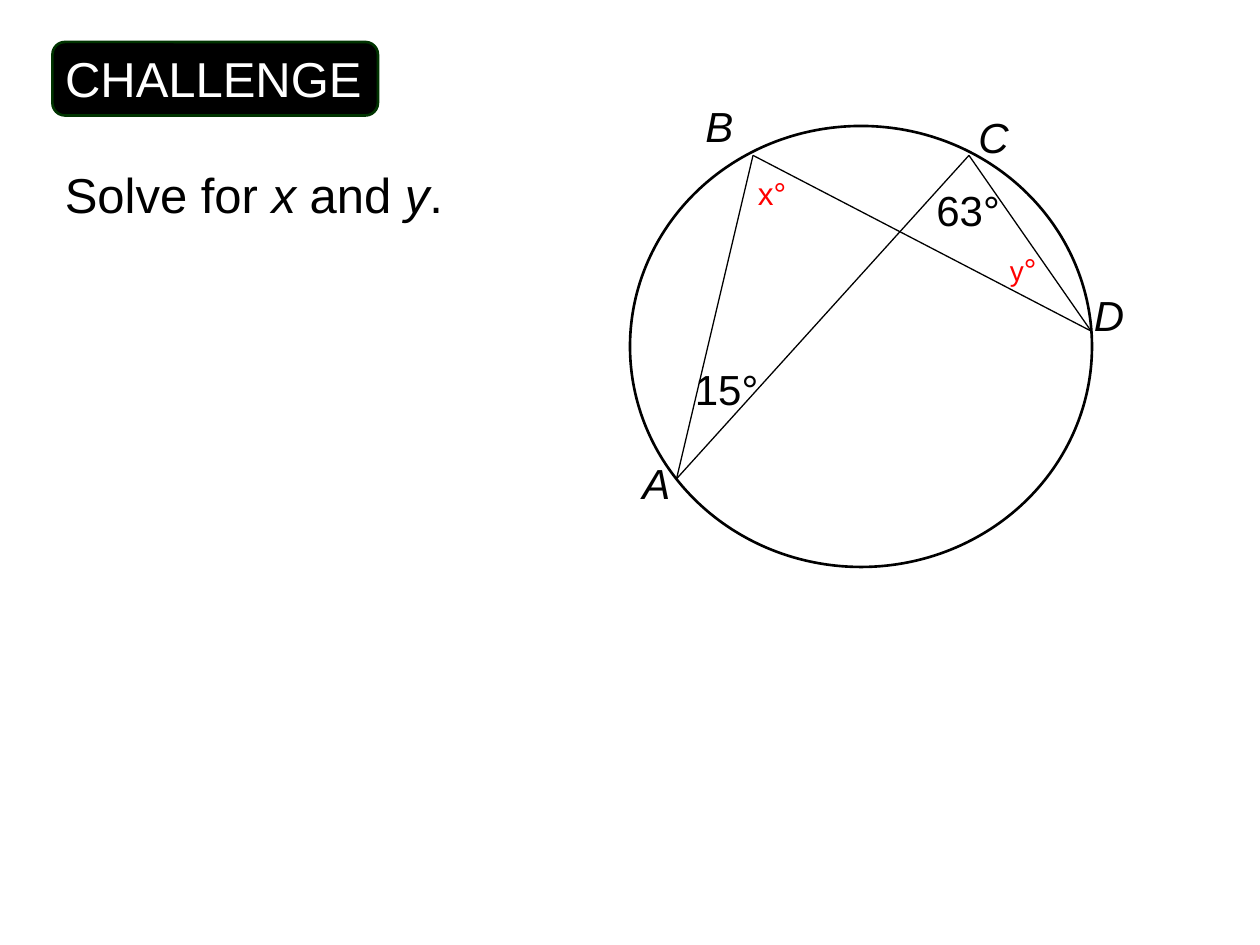
from pptx import Presentation
from pptx.dml.color import RGBColor
from pptx.enum.shapes import MSO_CONNECTOR, MSO_SHAPE
from pptx.enum.text import MSO_ANCHOR, MSO_AUTO_SIZE, PP_ALIGN
from pptx.oxml.ns import qn
from pptx.util import Pt
from lxml import etree

STRAIGHT = MSO_CONNECTOR.STRAIGHT
OVAL, ROUNDED = MSO_SHAPE.OVAL, MSO_SHAPE.ROUNDED_RECTANGLE
TOP, LEFT, GROW = MSO_ANCHOR.TOP, PP_ALIGN.LEFT, MSO_AUTO_SIZE.SHAPE_TO_FIT_TEXT
COLORS = {"black": "000000", "white": "FFFFFF", "red": "FF0000", "green": "003300"}


def rgb(name):
    return RGBColor.from_string(COLORS[name])


def write(sp, runs, color="black"):
    tf = sp.text_frame
    frame = {"word_wrap": True, "auto_size": GROW, "vertical_anchor": TOP}
    for name, value in frame.items():
        setattr(tf, name, value)
    p = tf.paragraphs[0]
    p.alignment = LEFT
    p.space_before = Pt(round(runs[0][1] * 0.1, 1))
    for text, size, italic in runs:
        r = p.add_run()
        r.text = text
        for name, value in {"name": "Arial", "size": Pt(size), "italic": italic}.items():
            setattr(r.font, name, value)
        r.font.color.rgb = rgb(color)


prs = Presentation()
prs.slide_width, prs.slide_height = Pt(720), Pt(540)
s = prs.slides.add_slide(prs.slide_layouts[5])

circle = s.shapes.add_shape(OVAL, Pt(360), Pt(72), Pt(264), Pt(252))
circle.fill.background()
badge = s.shapes.add_shape(ROUNDED, Pt(30), Pt(24), Pt(186), Pt(42))
badge.adjustments[0] = 0.17
badge.fill.solid()
badge.fill.fore_color.rgb = rgb("black")
for sp, color in ((circle, "black"), (badge, "green")):
    sp.shadow.inherit = False
    sp.line.color.rgb = rgb(color)
    sp.line.width = Pt(1.5)

points = {"A": (386.6, 273.6), "B": (430.3, 88.8), "C": (553.7, 88.8), "D": (623.5, 189.2)}
for start, end in ("CA", "DC", "AB", "DB"):
    chord = s.shapes.add_connector(STRAIGHT, *map(Pt, points[start] + points[end]))
    chord.line.color.rgb = rgb("black")
    chord.line.width = Pt(0.75)
    etree.SubElement(chord._element.spPr, qn("a:effectLst"))

labels = [
    (570, 139.5, 48, 29, [("y", 16, False), ("°", 18, False)], "red"),
    (390, 204, 66, 36, [("15°", 24, False)], "black"),
    (426, 96, 66, 29, [("x°", 18, False)], "red"),
    (528, 102, 60, 36, [("63°", 24, False)], "black"),
    (396, 54, 30, 36, [("B", 24, True)], "black"),
    (552, 60, 36, 36, [("C", 24, True)], "black"),
    (618, 162, 30, 36, [("D", 24, True)], "black"),
    (360, 258, 30, 36, [("A", 24, True)], "black"),
    (30, 90.5, 264, 41, [("Solve for ", 28, False), ("x ", 28, True), ("and", 28, False),
                         (" y", 28, True), (".", 28, False)], "black"),
]
for x, y, w, h, runs, color in labels:
    write(s.shapes.add_textbox(Pt(x), Pt(y), Pt(w), Pt(h)), runs, color)

title = s.shapes.title
box = {"left": 30, "top": 24, "width": 294, "height": 41}
for name, value in box.items():
    setattr(title, name, Pt(value))
write(title, [("CHALLENGE", 28, False)], "white")
badge._element.addnext(title._element)

prs.save("out.pptx")
